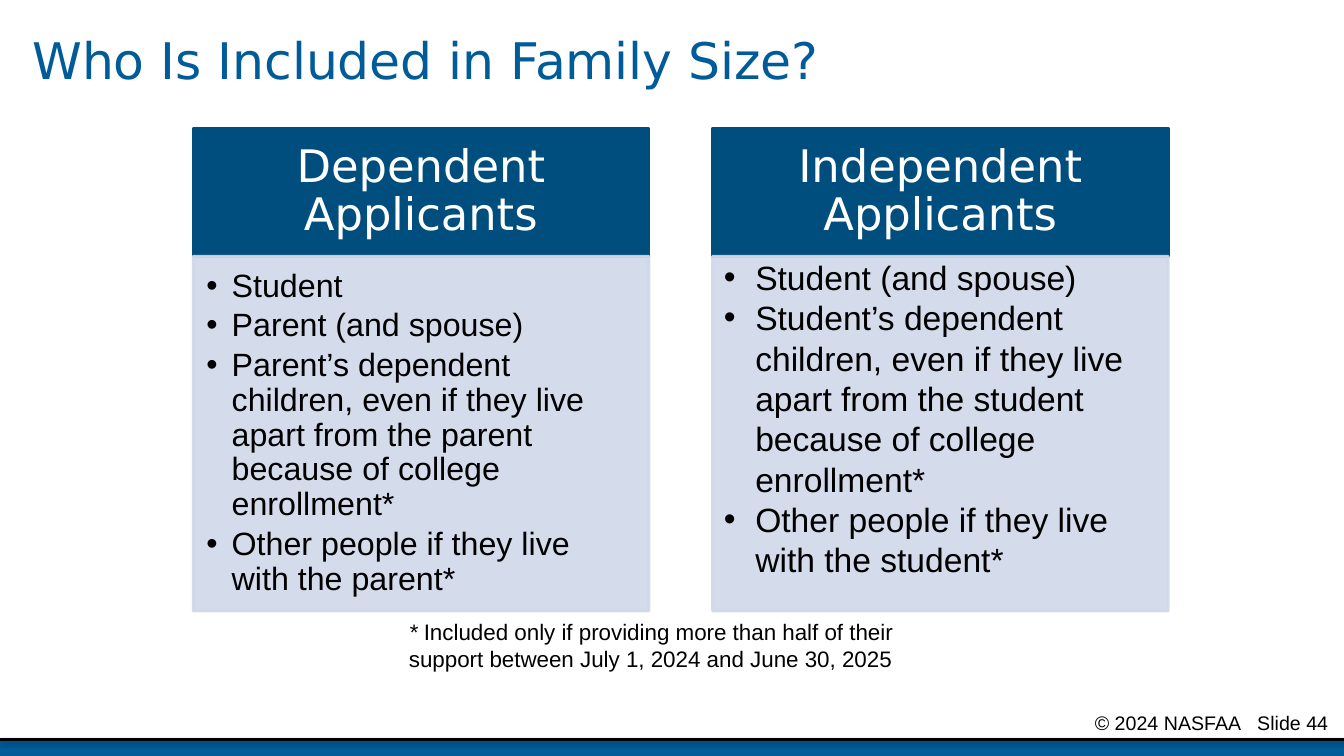
import pptx
import pptx.dml.color
import pptx.enum.shapes
import pptx.enum.text
import pptx.oxml
import pptx.oxml.ns
import pptx.util

Pt = pptx.util.Pt
ANCHOR = pptx.enum.text.MSO_ANCHOR
ALIGN = pptx.enum.text.PP_ALIGN
NS = pptx.oxml.ns.nsdecls("a")

TITLE = "Who Is Included in Family Size?"
GROUPS = [
    {
        "heading": "Dependent Applicants",
        "members": [
            "Student",
            "Parent (and spouse)",
            "Parent’s dependent children, even if they live apart from the parent "
            "because of college enrollment*",
            "Other people if they live with the parent*",
        ],
        "size": 23, "spacing": 0.9, "after": 3.5, "indent": 18,
        "insets": (9.5, 9.5, 13, 14),
    },
    {
        "heading": "Independent Applicants",
        "members": [
            "Student (and spouse)",
            "Student’s dependent children, even if they live apart from the student "
            "because of college enrollment*",
            "Other people if they live with the student*",
        ],
        "size": 24, "spacing": 1.0, "after": 0, "indent": 22.5,
        "insets": (8, 0.5, 8, 0),
    },
]
NOTE = [
    ("* ", True),
    ("Included only if providing more than half of their support "
     "between July 1, 2024 and June 30, 2025", False),
]
FOOTER = "© 2024 NASFAA\tSlide 44"

BLUE, NAVY, PALE, BLACK, WHITE = "005B99", "004E7D", "D0D8E8", "000000", "FFFFFF"
HEAD_FONT, BODY_FONT = "DejaVu Sans", "Arial"
WIDTH, HEIGHT = 960, 540
CARD_LEFT, CARD_TOP, CARD_W, CARD_STEP = 138, 91.5, 325.5, 371
HEAD_H, BODY_H = 91.5, 253.5
BAR_TOP = 528


def paint(fmt, color, alpha=None):
    fmt.solid()
    fmt.fore_color.rgb = pptx.dml.color.RGBColor.from_string(color)
    if alpha:
        clr = fmt._xPr.find(".//" + pptx.oxml.ns.qn("a:srgbClr"))
        clr.append(pptx.oxml.parse_xml(f'<a:alpha {NS} val="{alpha * 1000}"/>'))


def frame(sp, anchor=ANCHOR.TOP, insets=(7.2, 3.6, 7.2, 3.6)):
    tf = sp.text_frame
    tf.word_wrap = True
    tf.vertical_anchor = anchor
    tf.margin_left, tf.margin_top, tf.margin_right, tf.margin_bottom = map(Pt, insets)
    return tf


def add_run(p, text, size, font, color, italic=False):
    r = p.add_run()
    r.text = text
    r.font.size = Pt(size)
    r.font.name = font
    r.font.italic = italic
    paint(r.font.fill, color)


def add_box(slide, left, top, width, height, anchor=ANCHOR.TOP):
    return frame(slide.shapes.add_textbox(Pt(left), Pt(top), Pt(width), Pt(height)), anchor)


def add_rect(slide, left, top, width, height, color, alpha=None, outlined=True):
    sp = slide.shapes.add_shape(pptx.enum.shapes.MSO_SHAPE.RECTANGLE,
                                Pt(left), Pt(top), Pt(width), Pt(height))
    sp.shadow.inherit = False
    paint(sp.fill, color, alpha)
    if outlined:
        paint(sp.line.fill, color, alpha)
        sp.line.width = Pt(2)
    else:
        sp.line.fill.background()
    return sp


def add_bullet(p, indent):
    pPr = p._p.get_or_add_pPr()
    pPr.set("marL", str(Pt(indent)))
    pPr.set("indent", str(-Pt(indent)))
    pPr.append(pptx.oxml.parse_xml(f'<a:buFont {NS} typeface="Arial"/>'))
    pPr.append(pptx.oxml.parse_xml(f'<a:buChar {NS} char="•"/>'))


def add_footer(slide):
    add_rect(slide, 0, BAR_TOP, WIDTH, 14, BLUE, outlined=False).height = Pt(HEIGHT - BAR_TOP)
    line = slide.shapes.add_connector(pptx.enum.shapes.MSO_CONNECTOR.STRAIGHT,
                                      0, Pt(BAR_TOP), Pt(WIDTH), Pt(BAR_TOP))
    paint(line.line.fill, BLACK)
    line.line.width = Pt(2)
    line._element.spPr.append(pptx.oxml.parse_xml(
        f'<a:effectLst {NS}><a:outerShdw blurRad="{Pt(3.1)}" dist="{Pt(1.6)}" dir="5400000" '
        f'rotWithShape="0"><a:srgbClr val="{BLACK}"><a:alpha val="38000"/></a:srgbClr>'
        '</a:outerShdw></a:effectLst>'))
    p = add_box(slide, 775, 504, 185, 18).paragraphs[0]
    p._p.get_or_add_pPr().append(pptx.oxml.parse_xml(
        f'<a:tabLst {NS}><a:tab pos="{Pt(116)}" algn="l"/></a:tabLst>'))
    add_run(p, FOOTER, 14, BODY_FONT, BLACK)


def add_card(slide, left, group):
    head = add_rect(slide, left, CARD_TOP, CARD_W, HEAD_H, NAVY)
    p = frame(head, ANCHOR.MIDDLE, (18, 10, 18, 10)).paragraphs[0]
    p.alignment = ALIGN.CENTER
    p.line_spacing = 0.9
    add_run(p, group["heading"], 32, HEAD_FONT, WHITE)

    body = add_rect(slide, left, CARD_TOP + HEAD_H, CARD_W, BODY_H, PALE, 90)
    tf = frame(body, insets=group["insets"])
    for i, member in enumerate(group["members"]):
        p = tf.add_paragraph() if i else tf.paragraphs[0]
        add_bullet(p, group["indent"])
        p.alignment = ALIGN.LEFT
        p.line_spacing = group["spacing"]
        p.space_after = Pt(group["after"])
        add_run(p, member, group["size"], BODY_FONT, BLACK)


def main():
    prs = pptx.Presentation()
    prs.slide_width, prs.slide_height = Pt(WIDTH), Pt(HEIGHT)
    slide = prs.slides.add_slide(prs.slide_layouts[6])
    paint(slide.background.fill, WHITE)

    add_footer(slide)
    for i, group in enumerate(GROUPS):
        add_card(slide, CARD_LEFT + i * CARD_STEP, group)

    p = add_box(slide, 16, 0, 928, 90, ANCHOR.MIDDLE).paragraphs[0]
    p.line_spacing = 0.9
    add_run(p, TITLE, 36, HEAD_FONT, BLUE)

    p = add_box(slide, 285, 438, 402, 46).paragraphs[0]
    for text, italic in NOTE:
        add_run(p, text, 16, BODY_FONT, BLACK, italic)

    prs.save("out.pptx")


if __name__ == "__main__":
    main()
